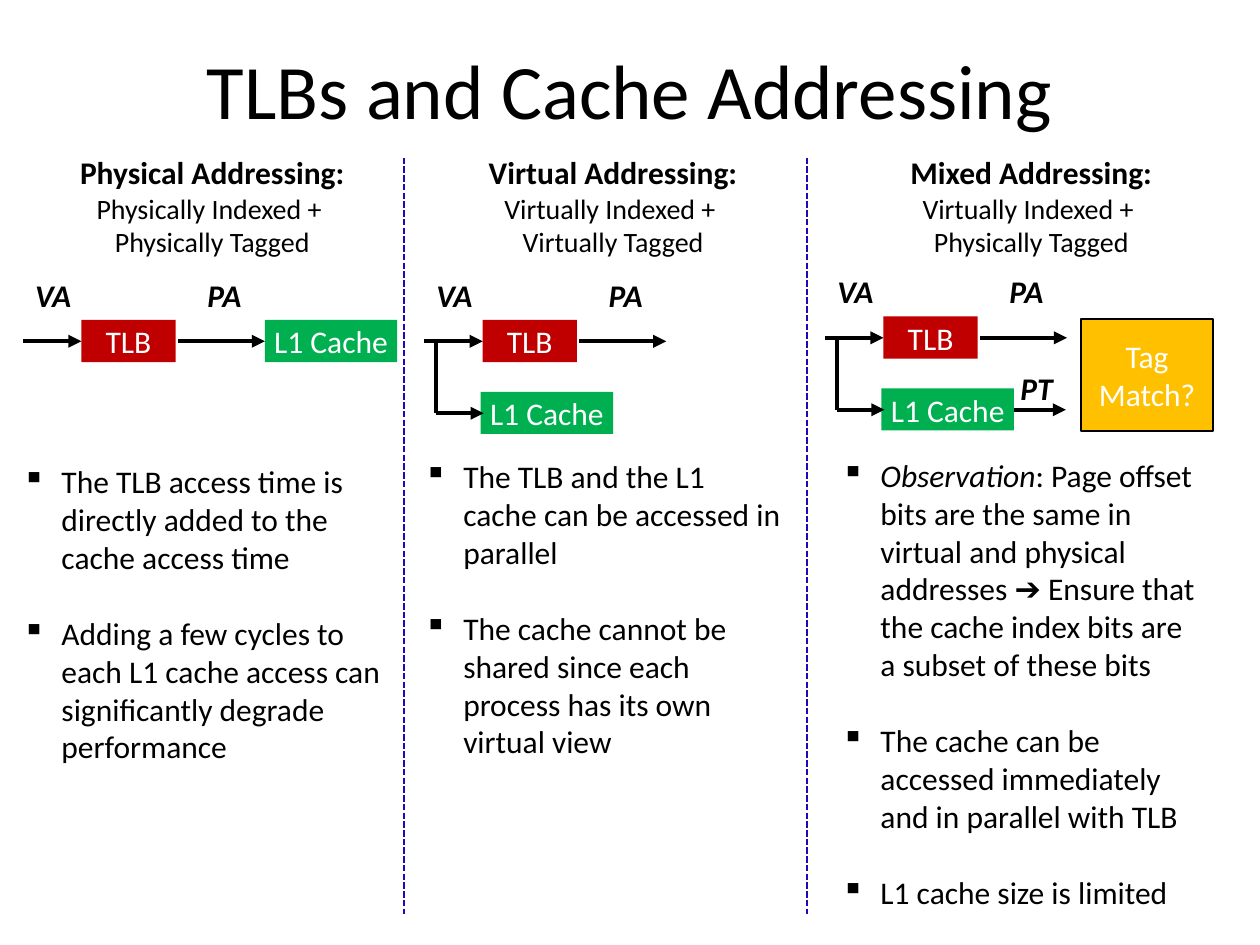
from pptx import Presentation, oxml
from pptx import util as u
from pptx.dml.color import RGBColor
from pptx.enum import dml, shapes, text
from pptx.oxml import ns

BLACK = RGBColor(0x00, 0x00, 0x00)
WHITE = RGBColor(0xFF, 0xFF, 0xFF)
RED = RGBColor(0xC0, 0x00, 0x00)
GREEN = RGBColor(0x00, 0xB0, 0x50)
AMBER = RGBColor(0xFF, 0xC0, 0x00)
INDIGO = RGBColor(0x1D, 0x08, 0xBA)

FONT = "Calibri"
BODY_SIZE = 18
BODY_LINE = 22
BLOCK_HEIGHT = 0.85
CACHE_WIDTH = 2.67
HEADING_WIDTH = 6.4
MIDDLE = 0.43
BRANCH = 1.45


def element(tag, **attributes):
    node = oxml.parse_xml(f"<{tag} {ns.nsdecls('a')}/>")
    for name, value in attributes.items():
        node.set(name, value)
    return node


def style(para, size=BODY_SIZE, color=BLACK, bold=False, italic=False):
    font = para.font
    font.name, font.size, font.bold, font.italic = FONT, u.Pt(size), bold, italic
    font.color.rgb = color


def add_text(page, box, inset=0.25):
    frame = page.shapes.add_textbox(*map(u.Cm, box)).text_frame
    frame.word_wrap = True
    frame.margin_left = frame.margin_right = u.Cm(inset)
    return frame


def add_title(page, box, words):
    frame = add_text(page, box)
    frame.vertical_anchor = text.MSO_ANCHOR.MIDDLE
    para = frame.paragraphs[0]
    para.text = words
    para.alignment = text.PP_ALIGN.CENTER
    style(para, 44)


def add_line(page, start, end, width=2.5, color=BLACK, arrow=True, dash=None):
    line = page.shapes.add_connector(
        shapes.MSO_CONNECTOR.STRAIGHT, *map(u.Cm, (*start, *end)))
    line.line.color.rgb = color
    line.line.width = u.Pt(width)
    if dash:
        line.line.dash_style = dash
    properties = line._element.spPr
    if arrow:
        properties.find(ns.qn("a:ln")).append(element("a:tailEnd", type="triangle"))
    properties.append(element("a:effectLst"))


def add_block(page, box, words, fill, outlined=False):
    block = page.shapes.add_shape(
        shapes.MSO_SHAPE.RECTANGLE, *map(u.Cm, box))
    block.shadow.inherit = False
    block.fill.solid()
    block.fill.fore_color.rgb = fill
    if outlined:
        block.line.color.rgb = BLACK
        block.line.width = u.Pt(1.25)
    else:
        block.line.fill.background()
    frame = block.text_frame
    frame.margin_left = frame.margin_right = 0
    frame.vertical_anchor = text.MSO_ANCHOR.MIDDLE
    para = frame.paragraphs[0]
    para.text = words
    para.alignment = text.PP_ALIGN.CENTER
    style(para, color=WHITE)


def add_label(page, left, top, words):
    para = add_text(page, (left, top, 0.9, 1.02), inset=0).paragraphs[0]
    para.text = words
    style(para, bold=True, italic=True)


def add_heading(page, box, name, detail):
    frame = add_text(page, box)
    first, second = frame.paragraphs[0], frame.add_paragraph()
    first.text, second.text = name, detail
    style(first, bold=True)
    style(second, 16)
    for para in (first, second):
        para.alignment = text.PP_ALIGN.CENTER


def add_bullets(page, box, points):
    frame = add_text(page, box)
    for index, (lead, words) in enumerate(points):
        para = frame.paragraphs[0] if index == 0 else frame.add_paragraph()
        if lead:
            span = para.add_run()
            span.text = lead
            span.font.italic = True
        para.add_run().text = words
        properties = para._p.get_or_add_pPr()
        properties.set("marL", str(u.Cm(0.79)))
        properties.set("indent", str(u.Cm(-0.79)))
        properties.append(element("a:buChar", char="▪"))
        if index:
            para.space_before = u.Pt(BODY_LINE)
        style(para)


def add_lookup(page, left, top):
    add_block(page, (left + 1.18, top, 1.9, BLOCK_HEIGHT), "TLB", RED)
    for words, offset in (("VA", 0.25), ("PA", 3.72)):
        add_label(page, left + offset, top - 1.02, words)
    for start, end in ((0, 1.18), (3.13, 4.88)):
        add_line(page, (left + start, top + MIDDLE), (left + end, top + MIDDLE))


def add_serial_diagram(page, left, top):
    add_lookup(page, left, top)
    add_block(page, (left + 4.88, top, CACHE_WIDTH, BLOCK_HEIGHT), "L1 Cache", GREEN)


def add_parallel_diagram(page, left, top):
    add_lookup(page, left, top)
    add_block(page, (left + 1.14, top + BRANCH, CACHE_WIDTH, BLOCK_HEIGHT),
              "L1 Cache", GREEN)
    fork = left + 0.24
    lower = top + MIDDLE + BRANCH
    add_line(page, (fork, top + MIDDLE), (fork, lower), width=2.25, arrow=False)
    add_line(page, (fork, lower), (left + 1.2, lower))


def add_matching_diagram(page, left, top):
    add_parallel_diagram(page, left, top)
    lower = top + MIDDLE + BRANCH
    add_block(page, (left + 5.16, top + 0.05, CACHE_WIDTH, 2.26),
              "Tag Match?", AMBER, outlined=True)
    add_line(page, (left + 3.81, lower), (left + 4.86, lower))
    add_label(page, left + 3.94, top + 0.94, "PT")


COLUMNS = [
    ("Physical Addressing:", "Physically Indexed + \vPhysically Tagged", 4.28,
     add_serial_diagram, (0.46, 6.45), (0.2, 9.19, 7.8, 6.4),
     [("", "The TLB access time is directly added to the cache access time"),
      ("", "Adding a few cycles to each L1 cache access can significantly "
           "degrade performance")]),
    ("Virtual Addressing:", "Virtually Indexed + \vVirtually Tagged", 12.36,
     add_parallel_diagram, (8.55, 6.45), (8.3, 9.09, 7.7, 6.4),
     [("", "The TLB and the L1 cache can be accessed in parallel"),
      ("", "The cache cannot be shared since each process has its own "
           "virtual view")]),
    ("Mixed Addressing:", "Virtually Indexed + \vPhysically Tagged", 20.79,
     add_matching_diagram, (16.63, 6.38), (16.71, 9.07, 7.8, 10.26),
     [("Observation", ": Page offset bits are the same in virtual and physical "
                      "addresses ➔ Ensure that the cache index bits are a "
                      "subset of these bits"),
      ("", "The cache can be accessed immediately and in parallel with TLB"),
      ("", "L1 cache size is limited")]),
]


def main():
    deck = Presentation()
    deck.slide_width, deck.slide_height = u.Cm(25.4), u.Cm(19.05)
    page = deck.slides.add_slide(deck.slide_layouts[6])
    add_title(page, (1.27, 0.2, 22.86, 3.18), "TLBs and Cache Addressing")
    for name, detail, center, add_diagram, origin, body, points in COLUMNS:
        add_heading(page, (center - HEADING_WIDTH / 2, 2.97, HEADING_WIDTH, 2.39),
                    name, detail)
        add_diagram(page, *origin)
        add_bullets(page, body, points)
    for left in (8.15, 16.26):
        add_line(page, (left, 3.18), (left, 18.42), width=1.25, color=INDIGO,
                 arrow=False, dash=dml.MSO_LINE.SQUARE_DOT)
    deck.save("out.pptx")


if __name__ == "__main__":
    main()
